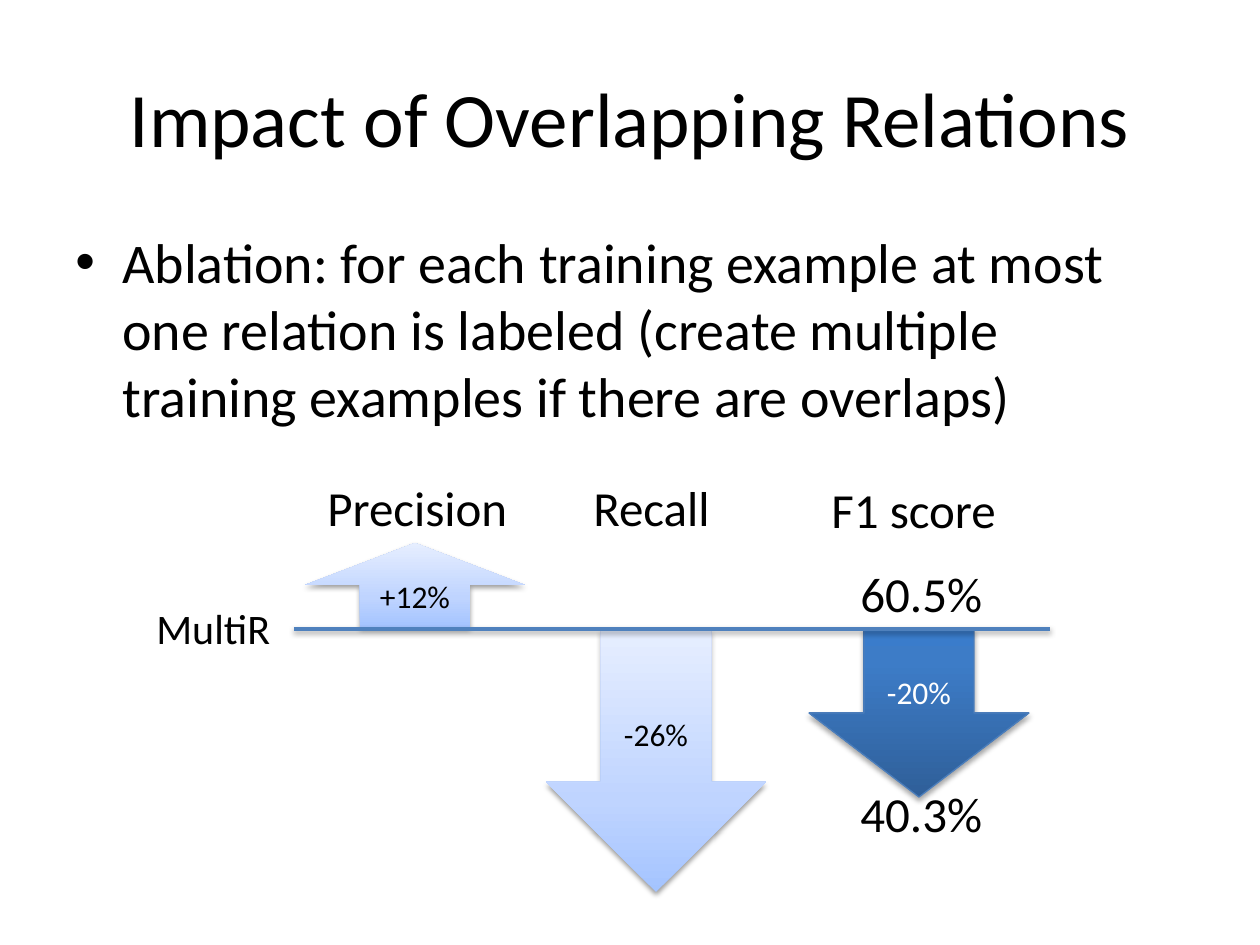
from dataclasses import dataclass
from typing import Optional

from lxml.etree import SubElement
from pptx import Presentation
from pptx.dml.color import RGBColor
from pptx.enum.shapes import MSO_CONNECTOR, MSO_SHAPE
from pptx.enum.text import MSO_ANCHOR as Anchor, MSO_AUTO_SIZE as AutoSize, PP_ALIGN as Align
from pptx.oxml.ns import qn
from pptx.util import Emu, Pt

SCALE = 914400 / 126
BLACK = "000000"
PALE = ((0, "A4C4FF"), (35, "BFD4FF"), (100, "E6EEFF"))
DEEP = ((0, "2F5F99"), (80, "3D7CC7"), (100, "3A7CCB"))
ARROW_WIDTH = 220


@dataclass(frozen=True)
class Label:
    text: str
    left: int
    top: int
    width: int
    height: int
    size: int = 28


@dataclass(frozen=True)
class Change:
    text: str
    preset: MSO_SHAPE
    left: int
    top: int
    height: int
    stops: tuple = PALE
    color: str = BLACK
    outline: Optional[str] = None
    opacity: int = 38
    drop: float = 1.6


F1_CHANGE = Change("-20%", MSO_SHAPE.DOWN_ARROW, 809, 629, 168, DEEP, "FFFFFF", "4B7EBC", 35, 1.8)
RECALL_CHANGE = Change("-26%", MSO_SHAPE.DOWN_ARROW, 546, 630, 262)
PRECISION_CHANGE = Change("+12%", MSO_SHAPE.UP_ARROW, 305, 543, 84)
F1_LABELS = (
    Label("F1 score", 819, 473, 193, 72),
    Label("60.5%", 848, 557, 149, 72),
    Label("40.3%", 848, 777, 149, 72),
    Label("MultiR", 144, 596, 140, 63, 24),
)
METRIC_LABELS = (
    Label("Recall", 581, 471, 144, 72),
    Label("Precision", 315, 471, 208, 72),
)


def px(*lengths: int) -> list:
    """Turn px lengths into EMU."""
    return [Emu(round(length * SCALE)) for length in lengths]


def rgb(color: str) -> RGBColor:
    """Return the colour for a hex string."""
    return RGBColor.from_string(color)


def write(frame, text: str, size: int, color: str = BLACK, align=Align.LEFT):
    """Write one run into the first paragraph and return the paragraph."""
    paragraph = frame.paragraphs[0]
    paragraph.alignment = align
    run = paragraph.add_run()
    run.text = text
    run.font.name = "Calibri"
    run.font.size = Pt(size)
    run.font.color.rgb = rgb(color)
    return paragraph


def add_shadow(shape, opacity: int = 38, drop: float = 1.6) -> None:
    """Give a shape or connector a soft shadow falling straight down."""
    effects = SubElement(shape._element.spPr, qn("a:effectLst"))
    shadow = SubElement(effects, qn("a:outerShdw"), blurRad=str(Pt(3.1)), dist=str(Pt(drop)),
                        dir="5400000", rotWithShape="0")
    tint = SubElement(shadow, qn("a:srgbClr"), val=BLACK)
    SubElement(tint, qn("a:alpha"), val=str(opacity * 1000))


def fill_gradient(shape, stops: tuple) -> None:
    """Fill a shape with colour stops running from bottom to top."""
    shape.fill.gradient()
    shape.fill.gradient_angle = 90
    stop_list = shape._element.spPr.find(".//" + qn("a:gsLst"))
    for stop in list(stop_list):
        stop_list.remove(stop)
    for position, color in stops:
        stop = SubElement(stop_list, qn("a:gs"), pos=str(position * 1000))
        SubElement(stop, qn("a:srgbClr"), val=color)


def add_label(slide, label: Label) -> None:
    """Add an unwrapped label that fits its text."""
    box = slide.shapes.add_textbox(*px(label.left, label.top, label.width, label.height))
    box.text_frame.word_wrap = False
    box.text_frame.auto_size = AutoSize.SHAPE_TO_FIT_TEXT
    write(box.text_frame, label.text, label.size)


def add_change(slide, change: Change) -> None:
    """Add a block arrow showing a change in one metric."""
    arrow = slide.shapes.add_shape(
        change.preset, *px(change.left, change.top, ARROW_WIDTH, change.height))
    fill_gradient(arrow, change.stops)
    if change.outline:
        arrow.line.color.rgb = rgb(change.outline)
        arrow.line.width = Pt(0.75)
    else:
        arrow.line.fill.background()
    add_shadow(arrow, change.opacity, change.drop)
    arrow.text_frame.vertical_anchor = Anchor.MIDDLE
    write(arrow.text_frame, change.text, 18, change.color, Align.CENTER)


def add_heading(slide, text: str) -> None:
    """Add the centred slide heading."""
    box = slide.shapes.add_textbox(*px(63, 38, 1134, 157))
    box.text_frame.word_wrap = True
    box.text_frame.vertical_anchor = Anchor.MIDDLE
    write(box.text_frame, text, 44, align=Align.CENTER)


def add_bullet(slide, text: str) -> None:
    """Add the bulleted explanation with a hanging indent."""
    box = slide.shapes.add_textbox(*px(63, 221, 1134, 623))
    box.text_frame.word_wrap = True
    paragraph = write(box.text_frame, text, 32)
    paragraph.space_before = Pt(6.4)
    properties = paragraph._p.get_or_add_pPr()
    indent = px(47)[0]
    properties.set("marL", str(indent))
    properties.set("indent", str(-indent))
    SubElement(properties, qn("a:buFont"), typeface="Arial")
    SubElement(properties, qn("a:buChar"), char="•")


def add_baseline(slide) -> None:
    """Add the MultiR baseline."""
    baseline = slide.shapes.add_connector(MSO_CONNECTOR.STRAIGHT, *px(294, 629, 1050, 629))
    baseline.line.color.rgb = rgb("4F81BD")
    baseline.line.width = Pt(2)
    add_shadow(baseline)


def main() -> None:
    """Build and save the slide."""
    deck = Presentation()
    deck.slide_width, deck.slide_height = px(1260, 945)
    slide = deck.slides.add_slide(deck.slide_layouts[6])
    add_heading(slide, "Impact of Overlapping Relations")
    add_bullet(slide, "Ablation: for each training example at most one relation is labeled "
                      "(create multiple training examples if there are overlaps)")
    add_change(slide, F1_CHANGE)
    for label in F1_LABELS:
        add_label(slide, label)
    add_change(slide, RECALL_CHANGE)
    for label in METRIC_LABELS:
        add_label(slide, label)
    add_change(slide, PRECISION_CHANGE)
    add_baseline(slide)
    deck.save("out.pptx")


if __name__ == "__main__":
    main()
